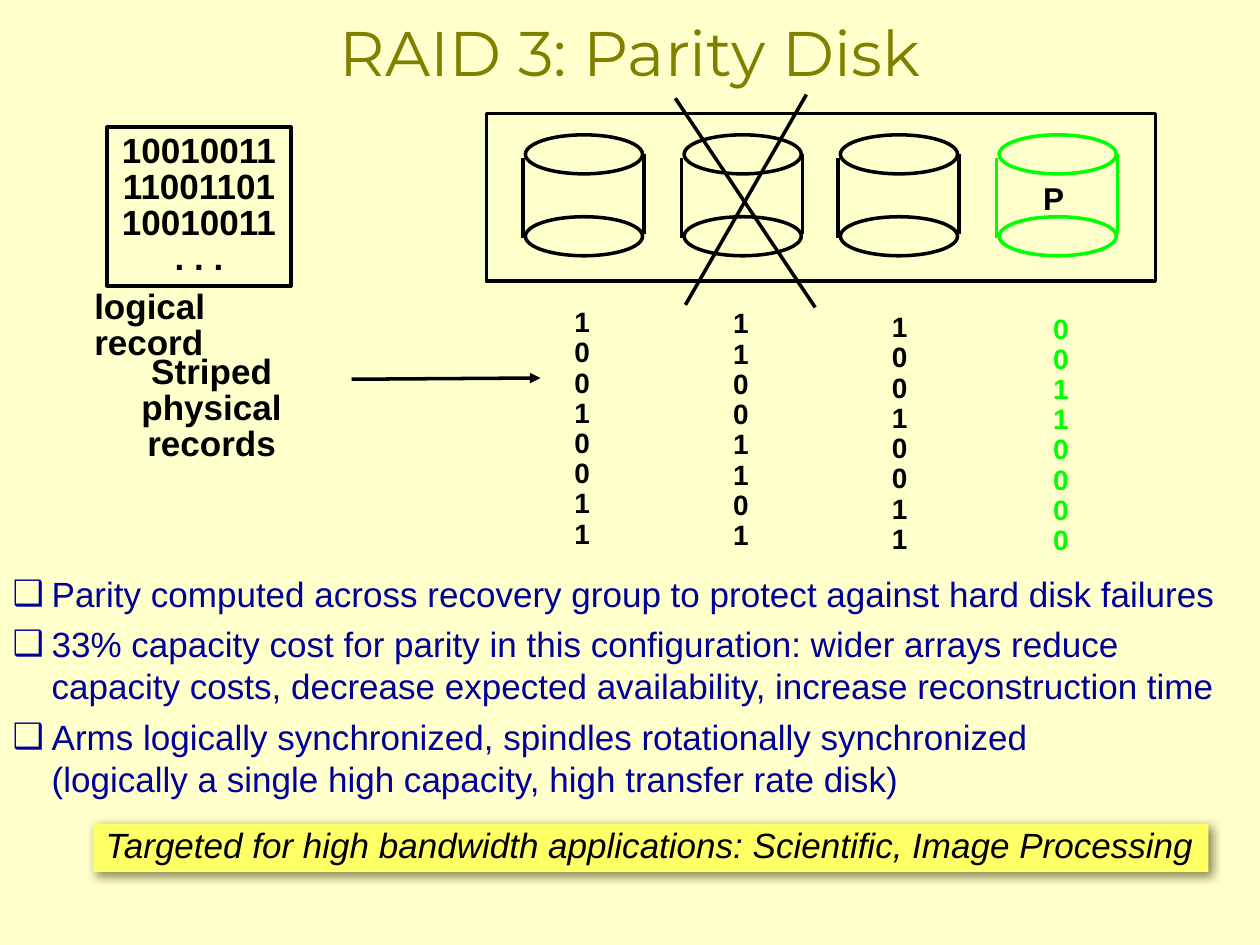
from lxml import etree
from pptx import Presentation
from pptx.dml.color import RGBColor
from pptx.enum.shapes import MSO_CONNECTOR, MSO_SHAPE
from pptx.enum.text import MSO_ANCHOR, MSO_AUTO_SIZE, PP_ALIGN
from pptx.oxml.ns import qn
from pptx.util import Inches, Pt

CREAM, BLACK, GREEN = "FFFFCC", "000000", "00FF00"
OLIVE, NAVY, YELLOW, SHADE = "808000", "000099", "FFFF66", "666633"

# cylinder left, bits left, bits top, bits, colour
DISKS = [
    (4.17, 4.46, 2.40, "10010011", BLACK),
    (5.43, 5.72, 2.41, "11001101", BLACK),
    (6.67, 6.98, 2.44, "10010011", BLACK),
    (7.93, 8.26, 2.45, "00110000", GREEN),
]
POINTS = [
    ["Parity computed across recovery group to protect against hard disk failures"],
    ["33% capacity cost for parity in this configuration: wider arrays reduce",
     "capacity costs, decrease expected availability, increase reconstruction time"],
    ["Arms logically synchronized, spindles rotationally synchronized",
     "(logically a single high capacity, high transfer rate disk)"],
]


def rgb(color):
    return RGBColor.from_string(color)


def place(shape, left, top, width, height):
    shape.left, shape.top = Inches(left), Inches(top)
    shape.width, shape.height = Inches(width), Inches(height)


def style(paragraph, size, color=BLACK, font="Arial", bold=False, italic=False,
          align=PP_ALIGN.LEFT, spacing=1.0):
    paragraph.alignment = align
    paragraph.line_spacing = spacing
    face = paragraph.font
    face.name, face.size = font, Pt(size)
    face.bold, face.italic = bold, italic
    face.color.rgb = rgb(color)


def write(shape, lines, size, wrap=False, **look):
    frame = shape.text_frame
    frame.word_wrap = wrap
    frame.text = "\n".join(lines)
    for paragraph in frame.paragraphs:
        style(paragraph, size, **look)


def add_label(slide, box, lines, size, **look):
    label = slide.shapes.add_textbox(*map(Inches, box))
    write(label, lines, size, **look)


def add_block(slide, kind, box, fill=None, line=None):
    block = slide.shapes.add_shape(kind, *map(Inches, box))
    block.shadow.inherit = False
    if fill:
        block.fill.solid()
        block.fill.fore_color.rgb = rgb(fill)
    else:
        block.fill.background()
    if line:
        block.line.color.rgb = rgb(line)
        block.line.width = Pt(2)
    else:
        block.line.fill.background()
    return block


def add_line(slide, start, end, color=BLACK, arrow=False):
    line = slide.shapes.add_connector(
        MSO_CONNECTOR.STRAIGHT, *map(Inches, (*start, *end)))
    line.line.color.rgb = rgb(color)
    line.line.width = Pt(2)
    if arrow:
        etree.SubElement(line.line._get_or_add_ln(), qn("a:tailEnd"), type="triangle")
    etree.SubElement(line._element.spPr, qn("a:effectLst"))


def add_cylinder(slide, left, color):
    for top in (1.07, 1.72):
        add_block(slide, MSO_SHAPE.OVAL, (left, top, 0.93, 0.31), CREAM, color)
    for x, top in ((left - 0.02, 1.25), (left + 0.94, 1.22)):
        add_line(slide, (x, top), (x, top + 0.64), color)


def cast_shadow(shape):
    effects = shape._element.spPr.find(qn("a:effectLst"))
    shadow = etree.SubElement(
        effects, qn("a:outerShdw"), blurRad=str(Pt(5)), dist=str(Pt(3)),
        dir=str(45 * 60000), algn="ctr", rotWithShape="0")
    tint = etree.SubElement(shadow, qn("a:srgbClr"), val=SHADE)
    etree.SubElement(tint, qn("a:alpha"), val="75000")


def set_bullet(paragraph, char=None):
    """Give a hanging bullet, or only the indent when char is None."""
    hang = Inches(0.31)
    props = paragraph._p.get_or_add_pPr()
    props.set("marL", str(hang))
    props.set("indent", str(-hang if char else 0))
    if char:
        bullet = etree.Element(qn("a:buChar"), char=char)
    else:
        bullet = etree.Element(qn("a:buNone"))
    props.find(qn("a:defRPr")).addprevious(bullet)


def fill_points(body):
    place(body, 0, 4.49, 9.9, 1.93)
    write(body, [line for point in POINTS for line in point], 20, wrap=True, color=NAVY)
    body.text_frame.auto_size = MSO_AUTO_SIZE.NONE
    paragraphs = iter(body.text_frame.paragraphs)
    for number, point in enumerate(POINTS):
        for row, _ in enumerate(point):
            paragraph = next(paragraphs)
            paragraph.space_before = Pt(5 if number and row == 0 else 0)
            set_bullet(paragraph, "❑" if row == 0 else None)


def main():
    deck = Presentation()
    deck.slide_width, deck.slide_height = Inches(10), Inches(7.5)
    slide = deck.slides.add_slide(deck.slide_layouts[1])
    slide.background.fill.solid()
    slide.background.fill.fore_color.rgb = rgb(CREAM)

    title, body = slide.placeholders
    place(title, 0, 0.06, 10, 0.69)
    write(title, ["RAID 3: Parity Disk"], 36, wrap=True, color=OLIVE,
          font="Montserrat", align=PP_ALIGN.CENTER)
    title.text_frame.vertical_anchor = MSO_ANCHOR.MIDDLE
    fill_points(body)

    for left, bits_left, bits_top, bits, color in DISKS:
        add_cylinder(slide, left, color)
        add_label(slide, (bits_left, bits_top, 0.32, 2.03), bits, 16,
                  color=color, bold=True, spacing=0.9)
    add_block(slide, MSO_SHAPE.RECTANGLE, (3.86, 0.9, 5.31, 1.33), line=BLACK)
    add_label(slide, (8.18, 1.42, 0.36, 0.35), ["P"], 18, bold=True, spacing=0.85)
    add_line(slide, (5.36, 0.78), (6.47, 2.44))
    add_line(slide, (6.4, 0.75), (5.44, 2.42))

    record = add_block(slide, MSO_SHAPE.RECTANGLE, (0.85, 1.01, 1.46, 1.26), CREAM, BLACK)
    write(record, [disk[3] for disk in DISKS[:3]] + [". . ."], 20,
          bold=True, align=PP_ALIGN.CENTER, spacing=0.85)
    add_label(slide, (0.65, 2.26, 1.8, 0.66), ["logical record"], 20,
              wrap=True, bold=True, spacing=0.85)
    add_label(slide, (0.63, 2.78, 2.1, 0.94), ["Striped physical", "records"], 20,
              wrap=True, bold=True, align=PP_ALIGN.CENTER, spacing=0.85)
    add_line(slide, (2.79, 3.01), (4.29, 3), arrow=True)

    target = add_block(slide, MSO_SHAPE.RECTANGLE, (0.74, 6.54, 8.85, 0.38), YELLOW)
    write(target, ["Targeted for high bandwidth applications: Scientific, Image Processing"],
          20, italic=True, spacing=0.85)
    target.text_frame.vertical_anchor = MSO_ANCHOR.TOP
    cast_shadow(target)

    deck.save("out.pptx")


if __name__ == "__main__":
    main()
